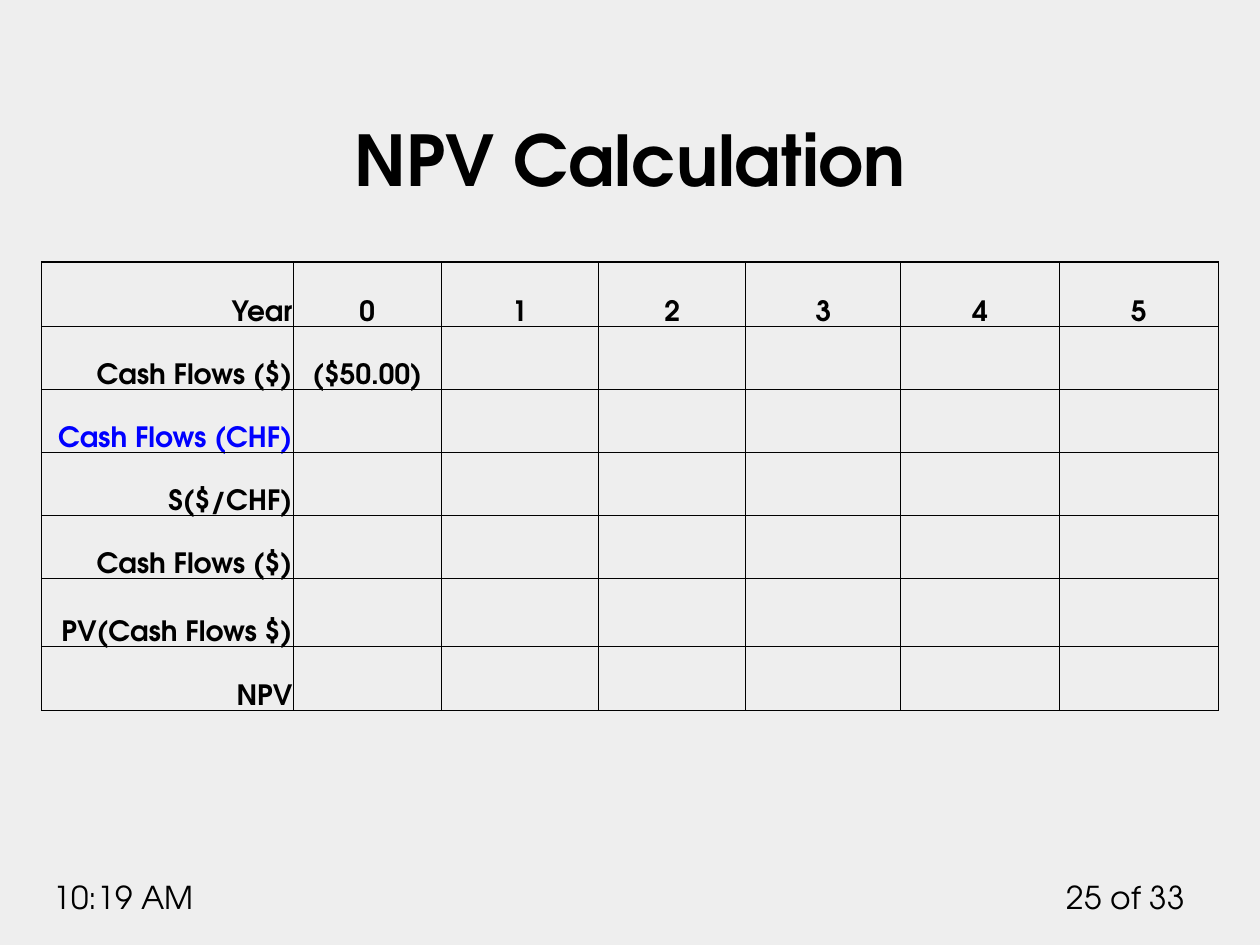
from dataclasses import dataclass
from typing import Any

from lxml import etree
from pptx import Presentation
from pptx import util as u
from pptx.dml.color import RGBColor
from pptx.enum import text
from pptx.oxml import ns

BACKGROUND = RGBColor(0xEE, 0xEE, 0xEE)
BLACK = RGBColor(0, 0, 0)
BLUE = RGBColor(0, 0, 0xFF)
THIN, HEAVY = 0.5, 1
LEFT, CENTER, RIGHT = text.PP_ALIGN.LEFT, text.PP_ALIGN.CENTER, text.PP_ALIGN.RIGHT

COLUMN_WIDTHS = [2, 1.17, 1.25, 1.17, 1.23, 1.26, 1.26]
ROW_HEIGHTS = [0.51, 0.5, 0.5, 0.5, 0.5, 0.54, 0.51]
CASH_FLOWS = [
    ["Year", "0", "1", "2", "3", "4", "5"],
    ["Cash Flows ($)", "($50.00)"],
    ["Cash Flows (CHF)"],
    ["S($/CHF)"],
    ["Cash Flows ($)"],
    ["PV(Cash Flows $)"],
    ["NPV"],
]


def write_text(frame, words, *, font, size, color=BLACK, bold=False, align=LEFT):
    para = frame.paragraphs[0]
    para.alignment = align
    span = para.add_run()
    span.text = words
    span.font.name = font
    span.font.size = u.Pt(size)
    span.font.bold = bold
    span.font.color.rgb = color


def draw_border(cell, side, width):
    line = etree.SubElement(
        cell._tc.get_or_add_tcPr(), ns.qn(f"a:ln{side}"), w=str(u.Pt(width))
    )
    fill = etree.SubElement(line, ns.qn("a:solidFill"))
    etree.SubElement(fill, ns.qn("a:srgbClr"), val=str(BLACK))


def edge_width(edge, last, is_header):
    heavy = edge in (0, last) or (edge == 1 and not is_header)
    return HEAVY if heavy else THIN


@dataclass
class SlideWriter:
    page: Any
    font: str = "TeX Gyre Adventor"

    def background(self, color):
        self.page.background.fill.solid()
        self.page.background.fill.fore_color.rgb = color

    def title(self, words, left, top, width, height):
        box = self.page.shapes.title
        box.left, box.top = u.Inches(left), u.Inches(top)
        box.width, box.height = u.Inches(width), u.Inches(height)
        box.text_frame.vertical_anchor = text.MSO_ANCHOR.BOTTOM
        write_text(box.text_frame, words, font=self.font, size=40, bold=True, align=CENTER)

    def label(self, words, left, top, width, height, align=LEFT):
        box = self.page.shapes.add_textbox(
            u.Inches(left), u.Inches(top), u.Inches(width), u.Inches(height)
        )
        box.text_frame.word_wrap = True
        box.text_frame.auto_size = text.MSO_AUTO_SIZE.SHAPE_TO_FIT_TEXT
        write_text(box.text_frame, words, font=self.font, size=18, align=align)

    def table(self, rows, left, top, widths, heights):
        grid = self.page.shapes.add_table(
            len(heights), len(widths), u.Inches(left), u.Inches(top),
            u.Inches(sum(widths)), u.Inches(sum(heights)),
        ).table
        grid.first_row = grid.horz_banding = False
        for column, width in zip(grid.columns, widths):
            column.width = u.Inches(width)
        for r, height in enumerate(heights):
            grid.rows[r].height = u.Inches(height)
            for c in range(len(widths)):
                cell = grid.cell(r, c)
                self.style_cell(cell, r, c, len(heights), len(widths))
                if c < len(rows[r]):
                    write_text(
                        cell.text_frame, rows[r][c], font=self.font, size=16, bold=True,
                        color=BLUE if "(CHF)" in rows[r][c] else BLACK,
                        align=CENTER if c else RIGHT,
                    )

    def style_cell(self, cell, r, c, row_count, column_count):
        cell.vertical_anchor = text.MSO_ANCHOR.BOTTOM
        cell.margin_left = cell.margin_right = cell.margin_top = u.Inches(0.01)
        cell.margin_bottom = 0
        draw_border(cell, "L", edge_width(c, column_count, r == 0))
        draw_border(cell, "R", edge_width(c + 1, column_count, r == 0))
        draw_border(cell, "T", edge_width(r, row_count, c == 0))
        draw_border(cell, "B", edge_width(r + 1, row_count, c == 0))
        cell.fill.background()


def main():
    deck = Presentation()
    deck.slide_width, deck.slide_height = u.Inches(10), u.Inches(7.5)
    writer = SlideWriter(deck.slides.add_slide(deck.slide_layouts[5]))
    writer.background(BACKGROUND)
    writer.label("25 of 33", 8.33, 6.92, 1.17, 0.4, align=RIGHT)
    writer.label("10:19 AM", 0.33, 6.92, 1.58, 0.4)
    writer.title("NPV Calculation", 0.5, 0.39, 9, 1.25)
    writer.table(CASH_FLOWS, 0.33, 2.08, COLUMN_WIDTHS, ROW_HEIGHTS)
    deck.save("out.pptx")


if __name__ == "__main__":
    main()
